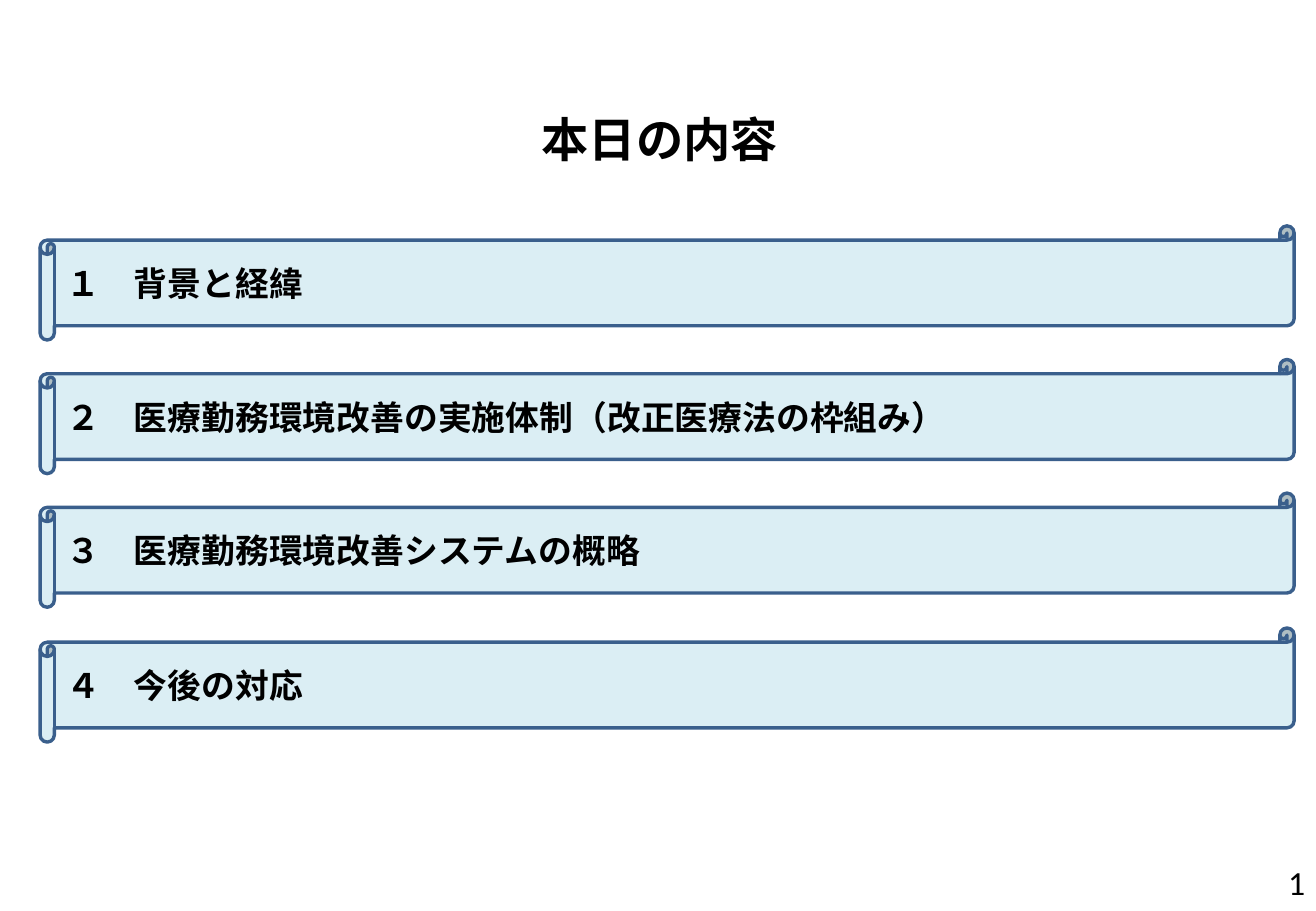
"""Builds the agenda slide: a title, four scroll banners and a page number."""
from dataclasses import dataclass
from lxml.etree import SubElement
from pptx import Presentation
from pptx.dml.color import RGBColor as Rgb
from pptx.enum.shapes import MSO_SHAPE as Kind
from pptx.enum.text import MSO_ANCHOR as Anchor, PP_ALIGN as Align
from pptx.oxml.ns import qn
from pptx.util import Pt


@dataclass
class Theme:
    ink: Rgb = Rgb(0, 0, 0)
    fill: Rgb = Rgb(0xDB, 0xEE, 0xF4)
    edge: Rgb = Rgb(0x3A, 0x5F, 0x8C)
    main: str = "Noto Sans CJK JP"
    digit: str = "Calibri"
    head: int = 28
    body: int = 20
    width: int = 2


SCALE = 9144
theme = Theme()


def px(*sizes):
    return [size * SCALE for size in sizes]


def write(shape, text, font, size, align, bold=True):
    frame = shape.text_frame
    frame.word_wrap = True
    frame.vertical_anchor = Anchor.MIDDLE
    line = frame.paragraphs[0]
    line.alignment = align
    run = line.add_run()
    run.text = text
    run.font.name = font
    run.font.size = Pt(size)
    run.font.bold = bold
    run.font.color.rgb = theme.ink
    SubElement(run.font._element, qn("a:ea"), typeface=font)


deck = Presentation()
deck.slide_width, deck.slide_height = px(1083, 750)
slide = deck.slides.add_slide(deck.slide_layouts[6])
shapes = slide.shapes

title = shapes.add_shape(Kind.BEVEL, *px(21, 74, 1044, 80))
title.shadow.inherit = False
title.fill.background()
title.line.fill.background()
write(title, "本日の内容", theme.main, theme.head, Align.CENTER)

topics = [
    "１　背景と経緯",
    "２　医療勤務環境改善の実施体制（改正医療法の枠組み）",
    "３　医療勤務環境改善システムの概略",
    "４　今後の対応",
]
first, span = 186, 331
for step, topic in enumerate(topics):
    top = first + step * span // (len(topics) - 1)
    scroll = shapes.add_shape(Kind.HORIZONTAL_SCROLL, *px(33, top, 1032, 94))
    scroll.shadow.inherit = False
    scroll.fill.solid()
    scroll.fill.fore_color.rgb = theme.fill
    scroll.line.color.rgb = theme.edge
    scroll.line.width = Pt(theme.width)
    write(scroll, topic, theme.main, theme.body, Align.LEFT)

page = shapes.add_textbox(*px(831, 706, 253, 40))
write(page, "1", theme.digit, theme.body, Align.RIGHT, bold=False)

deck.save("out.pptx")
